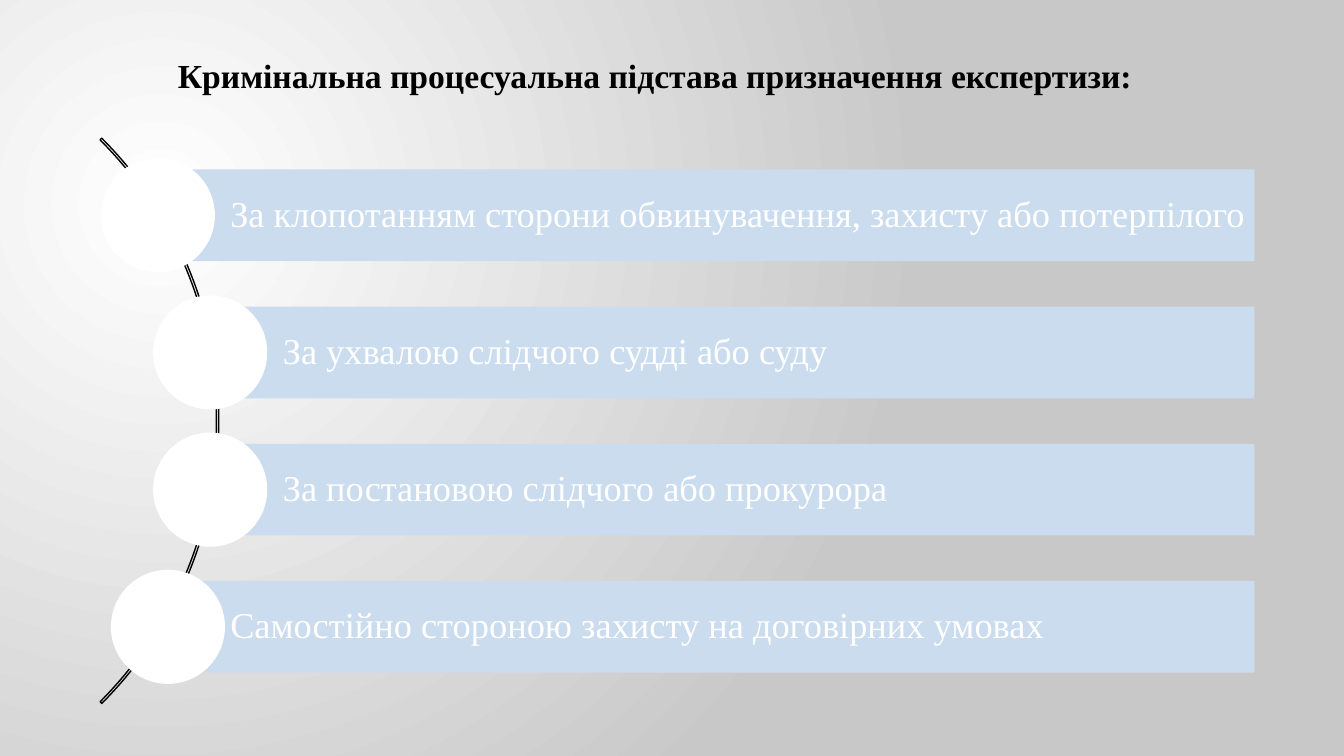
from dataclasses import dataclass

from pptx import Presentation
from pptx.dml.color import RGBColor
from pptx.enum.shapes import MSO_SHAPE
from pptx.enum.text import MSO_ANCHOR, PP_ALIGN
from pptx.oxml import parse_xml
from pptx.util import Pt

RECT, OVAL, ARC = MSO_SHAPE.RECTANGLE, MSO_SHAPE.OVAL, MSO_SHAPE.BLOCK_ARC
TOP, MIDDLE, LEFT = MSO_ANCHOR.TOP, MSO_ANCHOR.MIDDLE, PP_ALIGN.LEFT


@dataclass(frozen=True)
class Theme:
    font: str = "Times New Roman"
    ink: str = "000000"
    white: str = "FFFFFF"
    bar: str = "CADCEE"
    grey: str = "C8C8C8"
    title: int = 24
    body: int = 26


THEME = Theme()

# Layout in points
BAR_TOP, PITCH, BAR_H, BAR_END = 121, 98, 65.5, 896
DISC = 81.5

# Text, left edge of the bar, left edge of the disc
GROUNDS = [
    ("За клопотанням сторони обвинувачення, захисту або потерпілого", 112.5, 72),
    ("За ухвалою слідчого судді або суду", 150, 109.4),
    ("За постановою слідчого або прокурора", 150, 109.4),
    ("Самостійно стороною захисту на договірних умовах", 112.5, 79.2),
]


def paint(slide):
    """Radial background, centred near the upper left."""
    slide.background.fill.solid()
    props = slide.background.fill._xPr
    grad = parse_xml(
        '<a:gradFill xmlns:a="http://schemas.openxmlformats.org/drawingml/2006/main"'
        ' rotWithShape="1"><a:gsLst>'
        f'<a:gs pos="0"><a:srgbClr val="{THEME.white}"/></a:gs>'
        f'<a:gs pos="100000"><a:srgbClr val="{THEME.grey}"/></a:gs>'
        '</a:gsLst><a:path path="circle">'
        '<a:fillToRect l="50000" t="55000" r="125000" b="100000"/>'
        '</a:path></a:gradFill>'
    )
    props.replace(props[0], grad)


def shape(slide, kind, box, fill=None, line=None):
    item = slide.shapes.add_shape(kind, *map(Pt, box))
    item.shadow.inherit = False
    if fill:
        item.fill.solid()
        item.fill.fore_color.rgb = RGBColor.from_string(fill)
    else:
        item.fill.background()
    if line:
        item.line.color.rgb = RGBColor.from_string(line)
        item.line.width = Pt(1)
    else:
        item.line.fill.background()
    return item


def write(item, text, size, color, inset, anchor, bold=False, space=1.0):
    frame = item.text_frame
    left, top, right, bottom = map(Pt, inset)
    form = {
        "word_wrap": True, "vertical_anchor": anchor,
        "margin_left": left, "margin_top": top,
        "margin_right": right, "margin_bottom": bottom,
    }
    for name, value in form.items():
        setattr(frame, name, value)
    par = frame.paragraphs[0]
    par.alignment, par.line_spacing = LEFT, space
    run = par.add_run()
    run.text = text
    for name, value in {"name": THEME.font, "size": Pt(size), "bold": bold}.items():
        setattr(run.font, name, value)
    run.font.color.rgb = RGBColor.from_string(color)


def title(slide, text):
    box = slide.shapes.add_textbox(Pt(120), Pt(33), Pt(726.5), Pt(55))
    write(box, text, THEME.title, THEME.ink, (7.2, 6, 7.2, 3.6), TOP, bold=True)


def arc(slide):
    item = shape(slide, ARC, (-414.7, 15.1, 571, 571), line=THEME.ink)
    for index, value in enumerate((189, 27, 0.003)):
        item.adjustments[index] = value


def ground(slide, row, text, left, disc):
    top = BAR_TOP + row * PITCH
    bar = shape(slide, RECT, (left, top, BAR_END - left, BAR_H), THEME.bar)
    write(bar, text, THEME.body, THEME.white, (52, 5, 4, 5), MIDDLE, space=0.9)
    shape(slide, OVAL, (disc, top + (BAR_H - DISC) / 2, DISC, DISC), THEME.white)


def main():
    deck = Presentation()
    deck.slide_width, deck.slide_height = Pt(960), Pt(540)
    slide = deck.slides.add_slide(deck.slide_layouts[6])
    paint(slide)

    # Heading
    title(slide, "Кримінальна процесуальна підстава призначення експертизи:")

    # Curved list
    arc(slide)
    for row, entry in enumerate(GROUNDS):
        ground(slide, row, *entry)

    deck.save("out.pptx")


if __name__ == "__main__":
    main()
